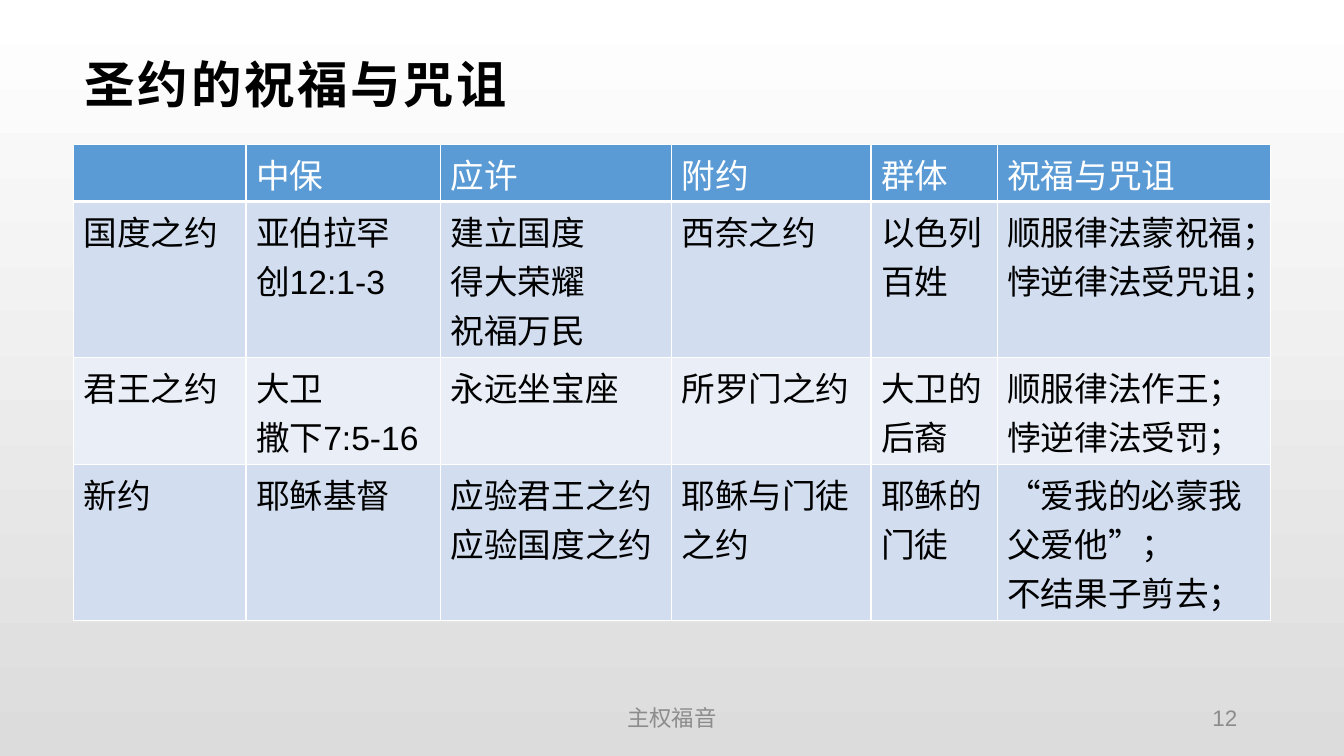
from pptx import Presentation
from pptx.dml.color import RGBColor
from pptx.enum.text import MSO_ANCHOR as Anchor, PP_ALIGN as Align
from pptx.oxml import parse_xml
from pptx.oxml.ns import nsdecls
from pptx.util import Inches, Pt


def color(value):
    return RGBColor.from_string(value)


def write(frame, text, hue, align=Align.LEFT, **font):
    """Fill a text frame, one paragraph per line of text."""
    for i, line in enumerate(text.split("\n")):
        para = frame.paragraphs[0] if i == 0 else frame.add_paragraph()
        para.alignment = align
        span = para.add_run()
        span.text = line
        for name, value in font.items():
            setattr(span.font, name, value)
        span.font.color.rgb = color(hue)


deck = Presentation()
deck.slide_width, deck.slide_height = Inches(13.33), Inches(7.5)
page = deck.slides.add_slide(deck.slide_layouts[6])

# Background: white fading down to grey
backdrop = page.background.fill
backdrop.gradient()
backdrop.gradient_angle = 270
for stop, hue in zip(backdrop.gradient_stops, ("FFFFFF", "DCDCDC")):
    stop.color.rgb = color(hue)

# Title, footer and page number
title_font = {"size": Pt(36), "name": "Roboto", "bold": True}
footer_font = {"size": Pt(16), "name": "Arial"}
labels = [
    ("圣约的祝福与咒诅", (0.73, 0.47, 11.87, 0.71), "000000", Align.LEFT, title_font),
    ("主权福音", (4.5, 6.94, 4.33, 0.35), "8C8C8C", Align.CENTER, footer_font),
    ("12", (9.42, 6.94, 2.95, 0.35), "8C8C8C", Align.RIGHT, footer_font),
]
for text, place, hue, align, font in labels:
    box = page.shapes.add_textbox(*map(Inches, place))
    frame = box.text_frame
    frame.word_wrap = True
    frame.vertical_anchor = Anchor.MIDDLE
    write(frame, text, hue, align, **font)
    if font is title_font:
        frame.margin_left, frame.margin_right = Inches(0.11), Inches(0.08)
        frame.margin_top = frame.margin_bottom = Inches(0.04)
        frame.paragraphs[0].runs[0].font._element.set("spc", "200")

# Covenant table
rows = [
    ["", "中保", "应许", "附约", "群体", "祝福与咒诅"],
    ["国度之约", "亚伯拉罕\n创12:1-3", "建立国度\n得大荣耀\n祝福万民", "西奈之约",
     "以色列百姓", "顺服律法蒙祝福；\n悖逆律法受咒诅；"],
    ["君王之约", "大卫\n撒下7:5-16", "永远坐宝座", "所罗门之约",
     "大卫的后裔", "顺服律法作王；\n悖逆律法受罚；"],
    ["新约", "耶稣基督", "应验君王之约\n应验国度之约", "耶稣与门徒之约",
     "耶稣的门徒", "“爱我的必蒙我父爱他”；\n不结果子剪去；"],
]
widths = [1.71, 1.93, 2.29, 1.98, 1.25, 2.71]
heights = [0.57, 1.55, 1.06, 1.55]
fills = ["5B9BD5", "D2DEEF", "EAEFF7", "D2DEEF"]

table = page.shapes.add_table(
    len(rows), len(widths), Inches(0.73), Inches(1.43),
    Inches(sum(widths)), Inches(sum(heights))).table
table.horz_banding = False
for column, width in zip(table.columns, widths):
    column.width = Inches(width)

for r, texts in enumerate(rows):
    table.rows[r].height = Inches(heights[r])
    for c, text in enumerate(texts):
        cell = table.cell(r, c)
        # White borders, heavier under the header
        props = cell._tc.get_or_add_tcPr()
        for side in "LRTB":
            points = 3 if r == 0 and side == "B" else 1
            props.append(parse_xml(
                f'<a:ln{side} {nsdecls("a")} w="{Pt(points)}"><a:solidFill>'
                f'<a:srgbClr val="FFFFFF"/></a:solidFill></a:ln{side}>'))
        cell.fill.solid()
        cell.fill.fore_color.rgb = color(fills[r])
        if text:
            write(cell.text_frame, text, "FFFFFF" if r == 0 else "000000",
                  size=Pt(24), name="Arial", bold=False)

deck.save("out.pptx")
